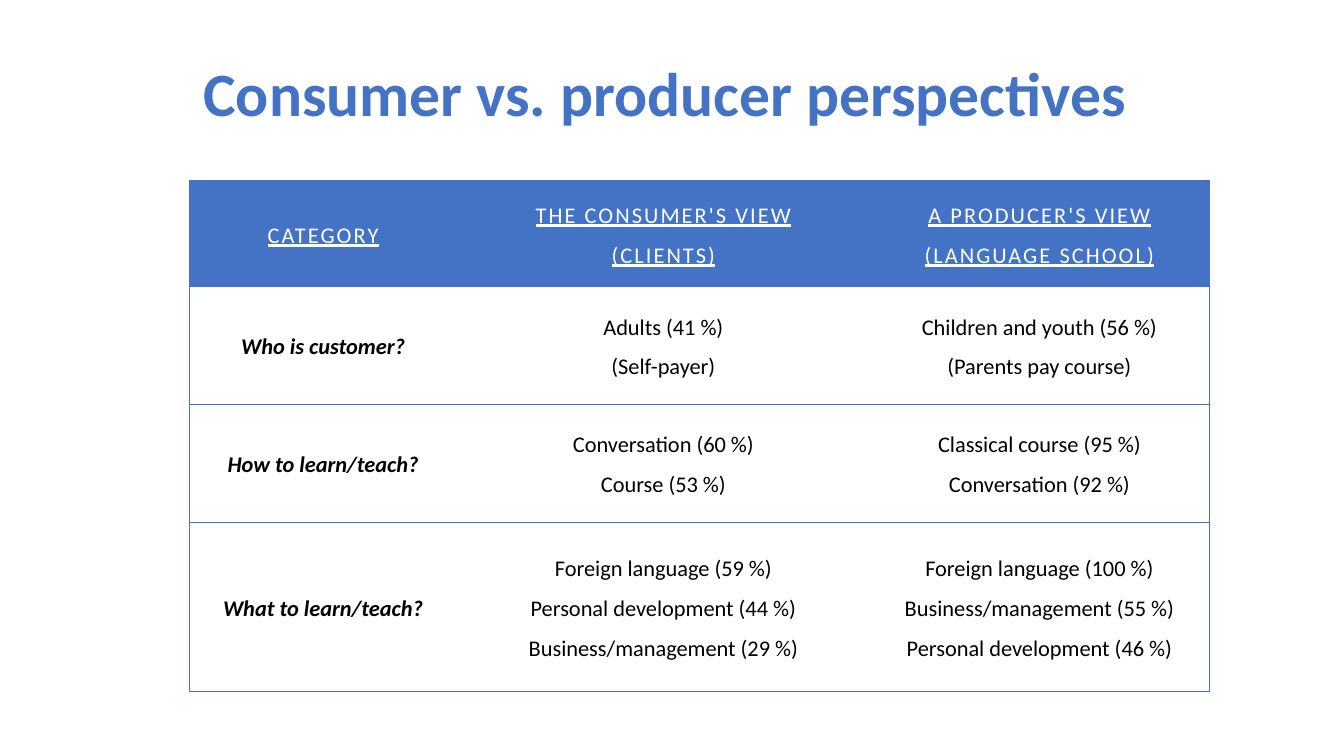
from dataclasses import dataclass

from lxml import etree
from pptx import Presentation
from pptx import util as u
from pptx.dml.color import RGBColor
from pptx.enum import text
from pptx.oxml import ns


@dataclass(frozen=True)
class Theme:
    font: str = "Calibri"
    blue: str = "4472C4"
    white: str = "FFFFFF"
    black: str = "000000"
    title: int = 44
    body: int = 16
    rule: float = 0.5


T = Theme()

COLS = [2.65, 4.1, 3.36]
HIGHS = [1.05, 1.17, 1.17, 1.68]
ROWS = [
    [["CATEGORY"],
     ["THE CONSUMER'S VIEW", "(CLIENTS)"],
     ["A PRODUCER'S VIEW", "(LANGUAGE SCHOOL)"]],
    [["Who is customer?"],
     ["Adults (41 %)", "(Self-payer)"],
     ["Children and youth (56 %)", "(Parents pay course)"]],
    [["How to learn/teach?"],
     ["Conversation (60 %)", "Course (53 %)"],
     ["Classical course (95 %)", "Conversation (92 %)"]],
    [["What to learn/teach?"],
     ["Foreign language (59 %)", "Personal development (44 %)",
      "Business/management (29 %)"],
     ["Foreign language (100 %)", "Business/management (55 %)",
      "Personal development (46 %)"]],
]


def add_run(para, words, size, color, bold=False):
    run = para.add_run()
    run.text = words
    font = run.font
    font.name, font.size, font.bold = T.font, u.Pt(size), bold
    font.color.rgb = RGBColor.from_string(color)
    return run


def add_title(slide, words):
    box = slide.shapes.add_textbox(
        u.Inches(0.92), u.Inches(0.32), u.Inches(11.5), u.Inches(1.02))
    frame = box.text_frame
    frame.word_wrap = True
    frame.vertical_anchor = text.MSO_ANCHOR.BOTTOM
    para = frame.paragraphs[0]
    para.alignment = text.PP_ALIGN.CENTER
    para.line_spacing = 0.9
    add_run(para, words, T.title, T.blue, bold=True)


def add_edge(cell, side, shown):
    props = cell._tc.get_or_add_tcPr()
    line = etree.SubElement(props, ns.qn(f"a:ln{side}"),
                            w=str(u.Pt(T.rule)))
    if shown:
        fill = etree.SubElement(line, ns.qn("a:solidFill"))
        etree.SubElement(fill, ns.qn("a:srgbClr"), val=T.blue)
    else:
        etree.SubElement(line, ns.qn("a:noFill"))


def fill_cell(cell, lines, row, col):
    head, label = row == 0, row > 0 and col == 0

    # Borders: outer frame and row rules, none between columns
    shown = {"L": col == 0, "R": col == len(COLS) - 1, "T": True, "B": True}
    for side, on in shown.items():
        add_edge(cell, side, on)
    cell.fill.solid()
    cell.fill.fore_color.rgb = RGBColor.from_string(
        T.blue if head else T.white)

    # Text
    cell.vertical_anchor = text.MSO_ANCHOR.MIDDLE
    cell.margin_left = cell.margin_right = u.Inches(0.1)
    cell.margin_top = cell.margin_bottom = u.Inches(0.1)
    frame = cell.text_frame
    for i, words in enumerate(lines):
        para = frame.add_paragraph() if i else frame.paragraphs[0]
        para.alignment = text.PP_ALIGN.CENTER
        para.line_spacing = 1.15
        para.space_after = u.Pt(6)
        run = add_run(para, words, T.body, T.white if head else T.black, label)
        run.font.italic = label
        run.font.underline = head
        if head:
            run.font._element.set("spc", "150")


def add_grid(slide):
    table = slide.shapes.add_table(
        len(ROWS), len(COLS), u.Inches(1.88), u.Inches(1.79),
        u.Inches(sum(COLS)), u.Inches(sum(HIGHS))).table
    table.first_row = table.horz_banding = False
    for col, width in zip(table.columns, COLS):
        col.width = u.Inches(width)
    for row, high in zip(table.rows, HIGHS):
        row.height = u.Inches(high)
    for r, row in enumerate(ROWS):
        for c, lines in enumerate(row):
            fill_cell(table.cell(r, c), lines, r, c)


def main():
    deck = Presentation()
    deck.slide_width, deck.slide_height = u.Inches(13.33), u.Inches(7.5)
    slide = deck.slides.add_slide(deck.slide_layouts[6])
    add_title(slide, "Consumer vs. producer perspectives ")
    add_grid(slide)
    deck.save("out.pptx")


if __name__ == "__main__":
    main()
